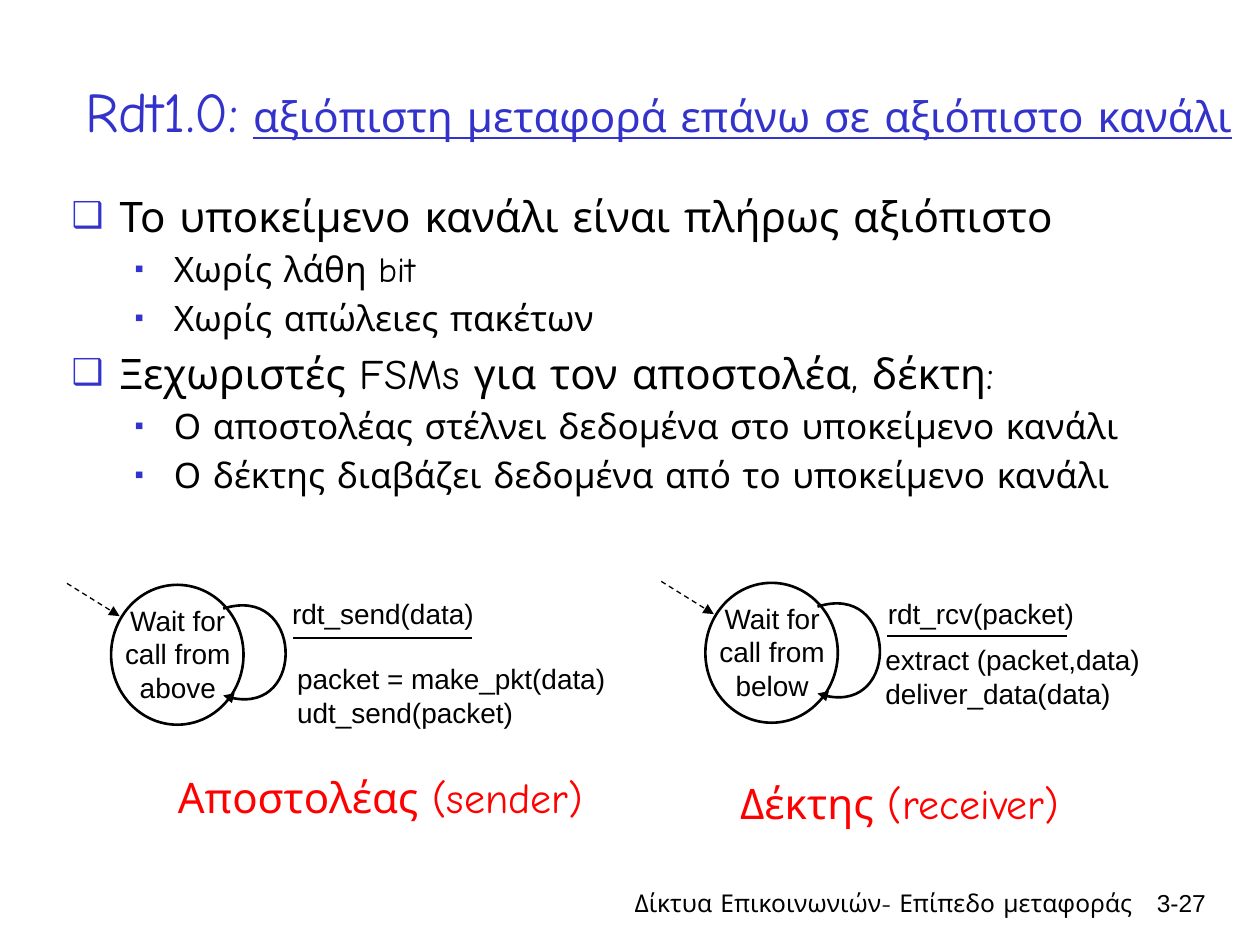
from lxml import etree
from pptx import Presentation
from pptx.dml.color import RGBColor
from pptx.enum.dml import MSO_LINE
from pptx.enum.shapes import MSO_CONNECTOR, MSO_SHAPE
from pptx.enum.text import MSO_ANCHOR, MSO_AUTO_SIZE, PP_ALIGN
from pptx.oxml.ns import qn
from pptx.util import Cm, Pt

BLACK = RGBColor(0x00, 0x00, 0x00)
WHITE = RGBColor(0xFF, 0xFF, 0xFF)
BLUE = RGBColor(0x33, 0x33, 0xCC)
RED = RGBColor(0xFF, 0x00, 0x00)
HAND, SANS = "Comic Neue", "Arial"

# character, size in %, left margin, hanging indent, font size for each level
LEVELS = [("❑", 85, 0.97, 0.97, 24), ("▪", 75, 2.06, 0.79, 20)]

TITLE = [("Rdt1.0:", 32, False), (" ", 24, False),
         ("αξιόπιστη μεταφορά επάνω σε αξιόπιστο κανάλι", 24, True)]
BODY = [
    (0, "Το υποκείμενο κανάλι είναι πλήρως αξιόπιστο"),
    (1, "Χωρίς λάθη bit"),
    (1, "Χωρίς απώλειες πακέτων"),
    (0, "Ξεχωριστές FSMs για τον αποστολέα, δέκτη:"),
    (1, "Ο αποστολέας στέλνει δεδομένα στο υποκείμενο κανάλι"),
    (1, "Ο δέκτης διαβάζει δεδομένα από το υποκείμενο κανάλι"),
]
MACHINES = [
    {"origin": (2.24, 11.79), "state": "Wait for call from above",
     "event": ("rdt_send(data)", (5.64, 11.91, 6.27, 1.19)),
     "actions": (["packet = make_pkt(data)", "udt_send(packet)"],
                 (5.74, 13.21, 7.44, 1.65)),
     "caption": ("Αποστολέας (sender)", (3.3, 15.42, 8.74, 1.3))},
    {"origin": (14.22, 11.75), "state": "Wait for call from below",
     "event": ("rdt_rcv(packet)", (17.65, 11.91, 4.9, 0.94)),
     "actions": (["extract (packet,data)", "deliver_data(data)"],
                 (17.6, 12.83, 6.91, 1.19)),
     "caption": ("Δέκτης (receiver)", (14.35, 15.54, 7.57, 1.3))},
]


class Deck:
    def __init__(self):
        self.prs = Presentation()
        self.prs.slide_width, self.prs.slide_height = Cm(25.4), Cm(19.05)
        self.s = self.prs.slides.add_slide(self.prs.slide_layouts[1])

    def style(self, font, color=BLACK, **values):
        for name, value in values.items():
            setattr(font, name, value)
        font.color.rgb = color

    def place(self, sp, box):
        for name, value in zip(("left", "top", "width", "height"), box):
            setattr(sp, name, Cm(value))

    def title(self, runs, box):
        sp = self.s.shapes.title
        self.place(sp, box)
        tf = sp.text_frame
        tf.auto_size, tf.vertical_anchor = MSO_AUTO_SIZE.NONE, MSO_ANCHOR.MIDDLE
        p = tf.paragraphs[0]
        p.alignment = PP_ALIGN.LEFT
        for text, size, underline in runs:
            r = p.add_run()
            r.text = text
            self.style(r.font, BLUE, name=HAND, size=Pt(size), underline=underline)

    def bullets(self, items, box):
        sp = self.s.placeholders[1]
        self.place(sp, box)
        tf = sp.text_frame
        tf.auto_size = MSO_AUTO_SIZE.NONE
        for i, (level, text) in enumerate(items):
            p = tf.paragraphs[0] if i == 0 else tf.add_paragraph()
            if i == 0:
                p.space_before = Pt(0)
            p.level = level
            char, percent, margin, hang, size = LEVELS[level]
            pPr = p._p.get_or_add_pPr()
            pPr.set("marL", str(Cm(margin)))
            pPr.set("indent", str(-Cm(hang)))
            color = etree.SubElement(pPr, qn("a:buClr"))
            etree.SubElement(color, qn("a:srgbClr"), val=str(BLUE))
            etree.SubElement(pPr, qn("a:buSzPct"), val=str(percent * 1000))
            etree.SubElement(pPr, qn("a:buFont"), typeface=SANS)
            etree.SubElement(pPr, qn("a:buChar"), char=char)
            r = p.add_run()
            r.text = text
            self.style(r.font, name=HAND, size=Pt(size))

    def text(self, lines, box, align=PP_ALIGN.LEFT, font=SANS, size=16,
             color=BLACK, wrap=True):
        tf = self.s.shapes.add_textbox(*map(Cm, box)).text_frame
        tf.word_wrap = wrap
        for i, line in enumerate(lines):
            p = tf.paragraphs[0] if i == 0 else tf.add_paragraph()
            p.alignment = align
            r = p.add_run()
            r.text = line
            self.style(r.font, color, name=font, size=Pt(size))

    def outline(self, sp, width, arrow=False):
        sp.line.color.rgb = BLACK
        sp.line.width = Pt(width)
        if arrow:
            etree.SubElement(sp.line._get_or_add_ln(), qn("a:tailEnd"), type="triangle")

    def circle(self, box):
        sp = self.s.shapes.add_shape(MSO_SHAPE.OVAL, *map(Cm, box))
        sp.shadow.inherit = False
        sp.fill.solid()
        sp.fill.fore_color.rgb = WHITE
        self.outline(sp, 1.5)

    def line(self, start, end, width=1.5, dash=None, arrow=False):
        sp = self.s.shapes.add_connector(MSO_CONNECTOR.STRAIGHT, *map(Cm, start + end))
        if dash:
            sp.line.dash_style = dash
        self.outline(sp, width, arrow)
        etree.SubElement(sp._element.spPr, qn("a:effectLst"))

    def curve(self, start, *points):
        """Draw one cubic Bezier: two control points, then the arrow tip."""
        builder = self.s.shapes.build_freeform(*map(Cm, start))
        builder.add_line_segments([tuple(map(Cm, pt)) for pt in points], close=False)
        sp = builder.convert_to_shape()
        segments = list(sp._element.iter(qn("a:lnTo")))
        bezier = etree.SubElement(segments[0].getparent(), qn("a:cubicBezTo"))
        for segment in segments:
            bezier.append(segment[0])
            segment.getparent().remove(segment)
        sp.shadow.inherit = False
        sp.fill.background()
        self.outline(sp, 1.5, arrow=True)

    def machine(self, origin, state, event, actions, caption):
        x, y = origin

        def at(dx, dy):
            return x + dx, y + dy

        self.circle((x, y, 2.67, 2.82))
        self.text([state], at(-0.18, 0.25) + (3.05, 2.54), PP_ALIGN.CENTER)
        self.curve(at(2.26, 0.48), at(3.86, -0.03), at(3.96, 2.81), at(2.26, 2.23))
        self.line(at(-0.89, -0.03), at(0.17, 0.63), 0.75, MSO_LINE.DASH, arrow=True)
        self.line(at(3.67, 1.07), at(7.28, 1.07))
        self.text([event[0]], event[1])
        self.text(*actions)
        self.text([caption[0]], caption[1], PP_ALIGN.CENTER, HAND, 24, RED, wrap=False)


def main():
    deck = Deck()
    deck.title(TITLE, (1.47, 0.64, 23.93, 3.18))
    deck.bullets(BODY, (1.19, 3.71, 21.95, 8.38))
    for machine in MACHINES:
        deck.machine(**machine)
    deck.text(["Δίκτυα Επικοινωνιών- Επίπεδο μεταφοράς"], (11.68, 17.78, 11.4, 1.27),
              PP_ALIGN.RIGHT, HAND, 14)
    deck.text(["3-27"], (22.68, 17.78, 1.88, 1.27), PP_ALIGN.RIGHT, SANS, 14)
    deck.prs.save("out.pptx")


if __name__ == "__main__":
    main()
